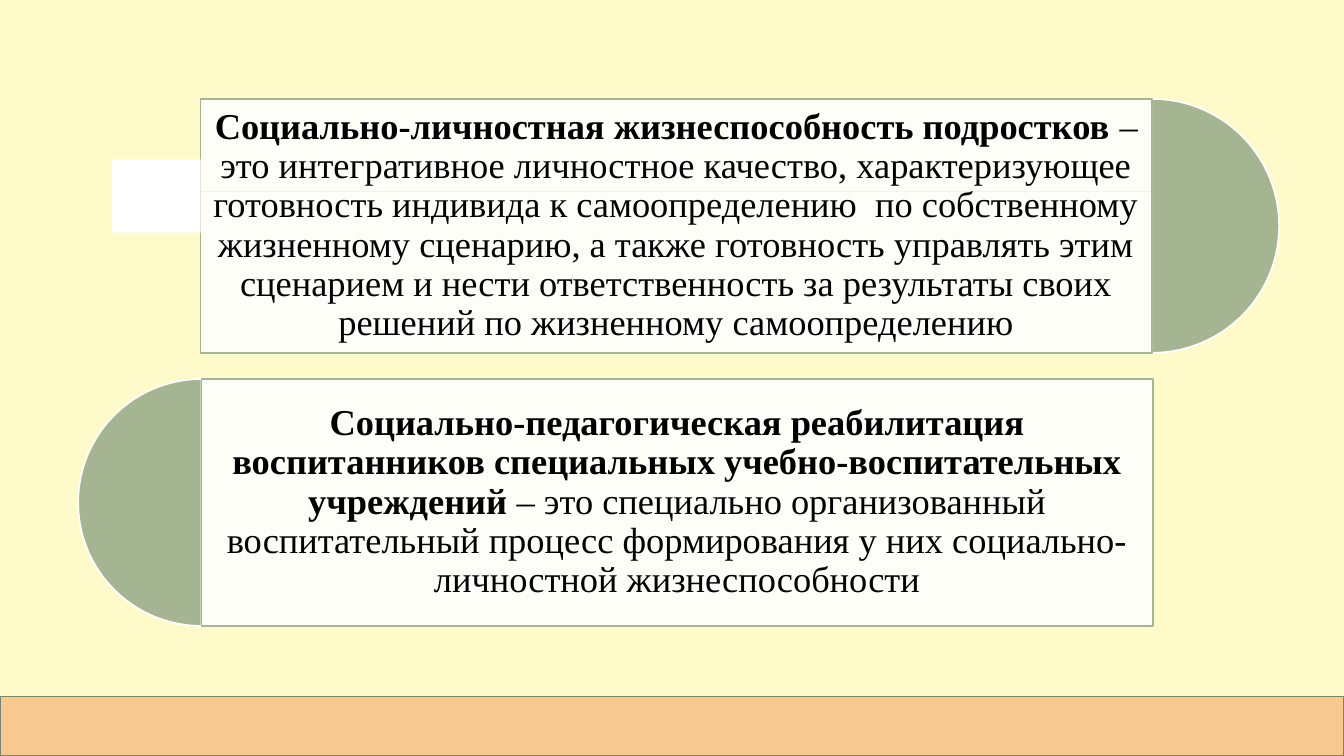
from lxml import etree
from pptx import Presentation
from pptx.dml.color import RGBColor
from pptx.enum.shapes import MSO_CONNECTOR, MSO_SHAPE
from pptx.enum.text import MSO_ANCHOR, PP_ALIGN
from pptx.oxml.ns import qn
from pptx.util import Pt

RECT, PIE = MSO_SHAPE.RECTANGLE, MSO_SHAPE.PIE
STRAIGHT = MSO_CONNECTOR.STRAIGHT
MIDDLE, CENTER = MSO_ANCHOR.MIDDLE, PP_ALIGN.CENTER

CREAM = RGBColor(0xFE, 0xFA, 0xC9)
PEACH = RGBColor(0xF8, 0xC8, 0x91)
SAGE = RGBColor(0xA5, 0xB5, 0x92)
DARK_SAGE = RGBColor(0x7A, 0x86, 0x6C)
GRAY = RGBColor(0x80, 0x80, 0x80)
WHITE = RGBColor(0xFF, 0xFF, 0xFF)
BLACK = RGBColor(0, 0, 0)

FONT = {"name": "Times New Roman", "size": Pt(26)}
FRAME = {"word_wrap": True, "vertical_anchor": MIDDLE,
         "margin_left": Pt(8), "margin_right": Pt(8),
         "margin_top": Pt(8), "margin_bottom": Pt(8)}
PARAGRAPH = {"alignment": CENTER, "line_spacing": 0.9}

PANEL_WIDTH = 679.7
LEFT_HALF, RIGHT_HALF = (54, 162), (162, 54)
DEFINITIONS = [
    (144, 270.7, 176.4, 0, LEFT_HALF,
     "Социально-педагогическая реабилитация воспитанников специальных "
     "учебно-воспитательных учреждений ",
     "– это специально организованный воспитательный процесс формирования "
     "у них социально-личностной жизнеспособности"),
    (143.3, 70.6, 181.4, PANEL_WIDTH, RIGHT_HALF,
     "Социально-личностная жизнеспособность подростков ",
     "– это интегративное личностное качество, характеризующее готовность "
     "индивида к самоопределению  по собственному жизненному сценарию, "
     "а также готовность управлять этим сценарием и нести ответственность "
     "за результаты своих решений по жизненному самоопределению"),
]


def apply(obj, values):
    """Set each named attribute of an object."""
    for name, value in values.items():
        setattr(obj, name, value)


class Deck:
    """Hold the presentation and draw styled elements on its slide."""

    def __init__(self):
        """Open a wide presentation with one blank cream slide."""
        self.prs = Presentation()
        apply(self.prs, {"slide_width": Pt(960), "slide_height": Pt(540)})
        self.s = self.prs.slides.add_slide(self.prs.slide_layouts[6])
        self.s.background.fill.solid()
        self.s.background.fill.fore_color.rgb = CREAM

    def shape(self, kind, x, y, w, h, fill, line=None):
        """Add a filled preset shape with an optional outline."""
        sp = self.s.shapes.add_shape(kind, Pt(x), Pt(y), Pt(w), Pt(h))
        sp.shadow.inherit = False
        sp.fill.solid()
        sp.fill.fore_color.rgb = fill
        if line is None:
            sp.line.fill.background()
        else:
            sp.line.color.rgb = line
            sp.line.width = Pt(1.25)
        return sp

    def rule(self, x1, x2, y):
        """Add a thin horizontal line."""
        sp = self.s.shapes.add_connector(STRAIGHT, Pt(x1), Pt(y), Pt(x2), Pt(y))
        apply(sp.line, {"width": Pt(0.5)})
        sp.line.color.rgb = GRAY
        etree.SubElement(sp._element.spPr, qn("a:effectLst"))

    def half_disc(self, cx, y, size, angles):
        """Add half of a disc centred on cx."""
        sp = self.shape(PIE, cx - size / 2, y, size, size, SAGE, WHITE)
        for i, angle in enumerate(angles):
            sp.adjustments[i] = angle

    def panel(self, x, y, h, term, meaning):
        """Add a translucent panel with a bold term and its meaning."""
        sp = self.shape(RECT, x, y, PANEL_WIDTH, h, WHITE, SAGE)
        color = sp._element.spPr.find(qn("a:solidFill"))[0]
        etree.SubElement(color, qn("a:alpha"), val="90000")
        tf = sp.text_frame
        apply(tf, FRAME)
        p = tf.paragraphs[0]
        apply(p, PARAGRAPH)
        for text, bold in ((term, True), (meaning, False)):
            r = p.add_run()
            r.text = text
            apply(r.font, {**FONT, "bold": bold})
            r.font.color.rgb = BLACK


def main():
    """Build the slide and save it."""
    deck = Deck()
    deck.rule(94.3, 879.1, 136.8)
    deck.shape(RECT, 0, 497.5, 960, 42.5, PEACH, DARK_SAGE)
    for x, y, h, disc_offset, angles, term, meaning in DEFINITIONS:
        deck.half_disc(x + disc_offset, y, h, angles)
        deck.panel(x, y, h, term, meaning)
    deck.shape(RECT, 79.9, 113.8, 63.4, 52.3, WHITE)
    deck.prs.save("out.pptx")


if __name__ == "__main__":
    main()
